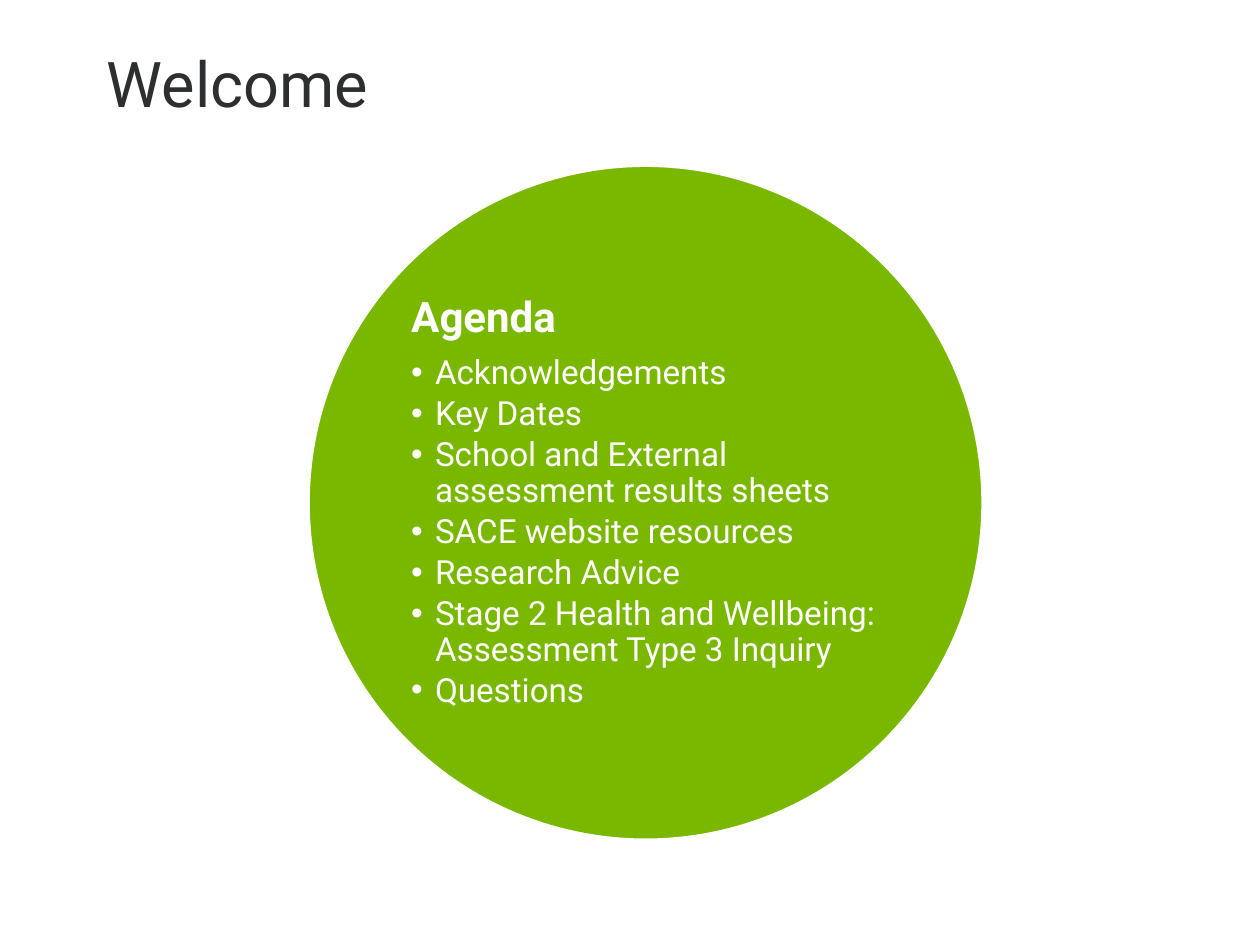
from pptx import Presentation
from pptx import util as u
from pptx.dml.color import RGBColor
from pptx.enum import shapes, text
from pptx.oxml.ns import qn
from lxml import etree

GREEN, WHITE, INK = "7AB800", "FFFFFF", "2D2E2F"


def color(value):
    return RGBColor.from_string(value)


class AgendaSlide:
    font_name = "Roboto"
    heading_size = 24
    item_size = 19

    def __init__(self, slide):
        self.slide = slide

    def place(self, shape, left, top, width, height):
        shape.left, shape.top = u.Cm(left), u.Cm(top)
        shape.width, shape.height = u.Cm(width), u.Cm(height)

    def format(self, paragraph, size, hex_color, bold=False, after=0):
        paragraph.alignment = text.PP_ALIGN.LEFT
        paragraph.line_spacing = 0.9
        paragraph.space_before = u.Pt(0)
        paragraph.space_after = u.Pt(after)
        for run in paragraph.runs:
            run.font.name = self.font_name
            run.font.size = u.Pt(size)
            run.font.bold = bold
            run.font.color.rgb = color(hex_color)

    def bullet(self, paragraph, char=None, indent=0):
        properties = paragraph._p.get_or_add_pPr()
        properties.set("marL", str(u.Cm(indent)))
        properties.set("indent", str(-u.Cm(indent)))
        if char:
            etree.SubElement(properties, qn("a:buChar")).set("char", char)
        else:
            etree.SubElement(properties, qn("a:buNone"))

    def frame(self, shape):
        frame = shape.text_frame
        frame.word_wrap = True
        frame.auto_size = text.MSO_AUTO_SIZE.NONE
        frame.vertical_anchor = text.MSO_ANCHOR.MIDDLE
        return frame

    def title(self, wording, *box):
        heading = self.slide.shapes.title
        self.place(heading, *box)
        frame = self.frame(heading)
        frame.text = wording
        self.format(frame.paragraphs[0], 36, INK)

    def circle(self, left, top, diameter):
        disc = self.slide.shapes.add_shape(
            shapes.MSO_SHAPE.OVAL, u.Cm(left), u.Cm(top), u.Cm(diameter), u.Cm(diameter))
        disc.shadow.inherit = False
        disc.fill.solid()
        disc.fill.fore_color.rgb = color(GREEN)
        disc.line.color.rgb = color(WHITE)
        disc.line.width = u.Pt(1.5)
        self.slide.placeholders[1].element.addprevious(disc.element)

    def agenda(self, heading, items, *box):
        body = self.slide.placeholders[1]
        self.place(body, *box)
        frame = self.frame(body)
        frame.margin_left = frame.margin_right = u.Cm(0.08)
        frame.margin_top = frame.margin_bottom = u.Cm(0.08)
        frame.text = "\n".join([heading, *items])
        first, *rest = frame.paragraphs
        self.bullet(first)
        self.format(first, self.heading_size, WHITE, bold=True, after=self.heading_size * 0.35)
        for item in rest:
            item.level = 1
            self.bullet(item, "•", 0.48)
            self.format(item, self.item_size, WHITE, after=self.item_size * 0.15)


def main():
    deck = Presentation()
    deck.slide_width, deck.slide_height = u.Cm(25.4), u.Cm(19.05)
    welcome = AgendaSlide(deck.slides.add_slide(deck.slide_layouts[1]))
    welcome.title("Welcome", 1.9, 0.56, 22.23, 2.39)
    welcome.circle(6.22, 3.34, 13.59)
    welcome.agenda("Agenda", [
        "Acknowledgements",
        "Key Dates",
        "School and External assessment results sheets",
        "SACE website resources",
        "Research Advice",
        "Stage 2 Health and Wellbeing: Assessment Type 3 Inquiry",
        "Questions",
    ], 8.21, 5.33, 9.61, 9.61)
    deck.save("out.pptx")


if __name__ == "__main__":
    main()
